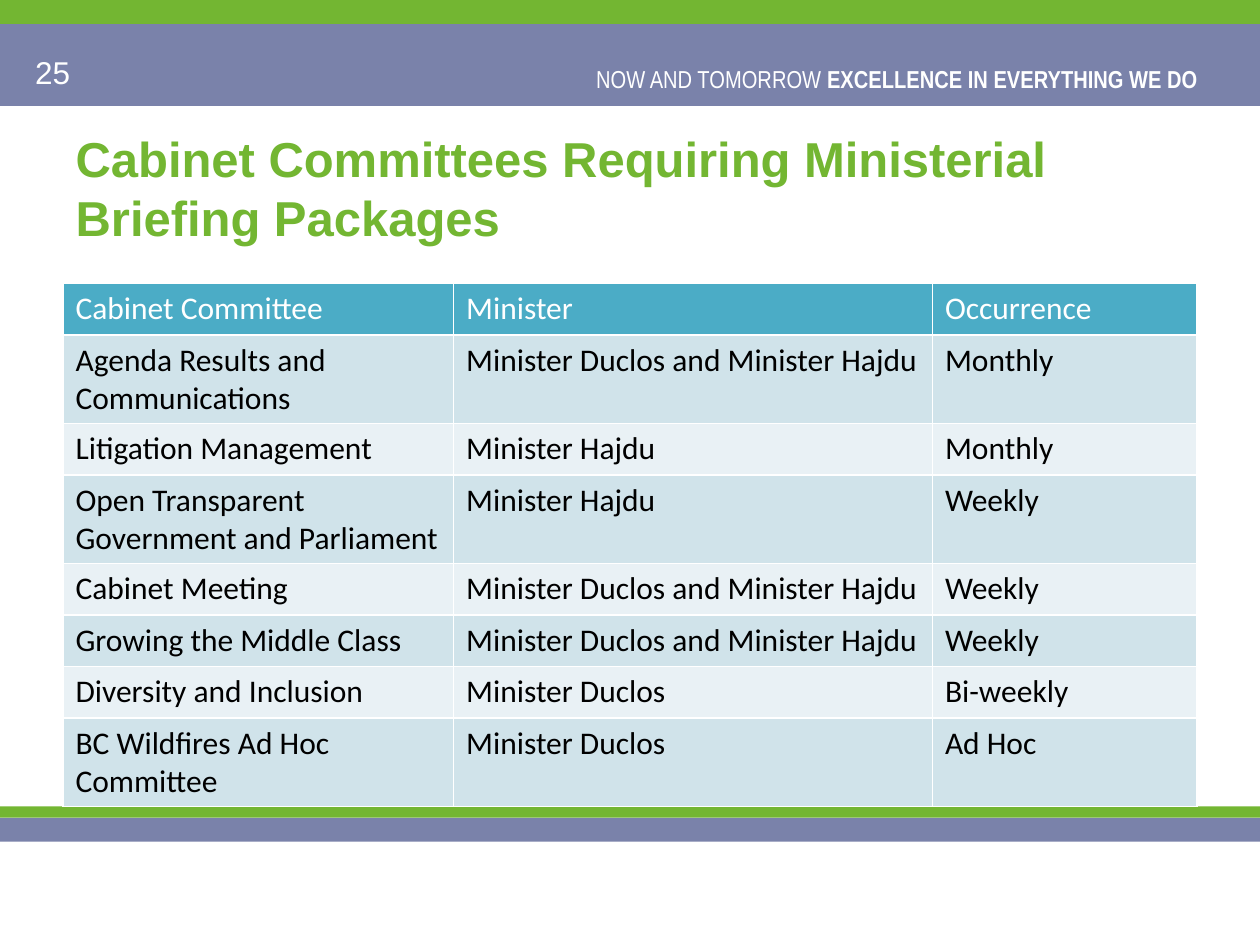
from pptx import Presentation
from pptx.dml.color import RGBColor
from pptx.enum.shapes import MSO_SHAPE
from pptx.enum.text import MSO_ANCHOR, PP_ALIGN
from pptx.util import Inches, Pt

GREEN, SLATE, WHITE, BLACK = "73B632", "7A82AA", "FFFFFF", "000000"
HEADER_FILL, BAND_FILLS = "4BACC6", ("D0E3EA", "E9F1F5")
COLUMN_WIDTHS, ROW_HEIGHT = (3.1, 3.8, 2.1), 0.41
BOTH = "Minister Duclos and Minister Hajdu"
COMMITTEES = [
    ("Cabinet Committee", "Minister", "Occurrence"),
    ("Agenda Results and Communications", BOTH, "Monthly"),
    ("Litigation Management", "Minister Hajdu", "Monthly"),
    ("Open Transparent Government and Parliament", "Minister Hajdu", "Weekly"),
    ("Cabinet Meeting", BOTH, "Weekly"),
    ("Growing the Middle Class", BOTH, "Weekly"),
    ("Diversity and Inclusion", "Minister Duclos", "Bi-weekly"),
    ("BC Wildfires Ad Hoc Committee", "Minister Duclos", "Ad Hoc"),
]


def color(value):
    return RGBColor.from_string(value)


def set_font(para, name, size, value, bold=False):
    font = para.font
    font.name, font.size, font.bold = name, Pt(size), bold
    font.color.rgb = color(value)


def add_band(page, top, height, fill):
    """Add a full-width strip."""
    band = page.shapes.add_shape(MSO_SHAPE.RECTANGLE, 0, Inches(top), Inches(10), Inches(height))
    band.shadow.inherit = False
    band.fill.solid()
    band.fill.fore_color.rgb = color(fill)
    band.line.fill.background()


def add_label(page, box, spans, name, size, align=PP_ALIGN.LEFT):
    """Add one white line made of (text, bold) spans."""
    frame = page.shapes.add_textbox(*map(Inches, box)).text_frame
    frame.word_wrap = True
    para = frame.paragraphs[0]
    para.alignment = align
    set_font(para, name, size, WHITE)
    for text, bold in spans:
        span = para.add_run()
        span.text = text
        if bold:
            span.font.bold = True


def add_header(page):
    add_band(page, 0.19, 0.65, SLATE)
    add_band(page, 0, 0.19, GREEN)
    motto = [("NOW AND TOMORROW ", False), ("EXCELLENCE IN EVERYTHING WE DO ", True)]
    add_label(page, (4.6, 0.46, 5.05, 0.34), motto, "Arial Narrow", 14, PP_ALIGN.RIGHT)
    add_label(page, (0.18, 0.37, 2.33, 0.4), [("25", False)], "Arial", 18)


def add_footer(page):
    add_band(page, 6.49, 0.19, SLATE)
    add_band(page, 6.4, 0.09, GREEN)


def place_title(page, box, text):
    title = page.shapes.title
    title.left, title.top, title.width, title.height = map(Inches, box)
    frame = title.text_frame
    frame.text = text
    frame.vertical_anchor = MSO_ANCHOR.MIDDLE
    para = frame.paragraphs[0]
    para.alignment = PP_ALIGN.LEFT
    set_font(para, "Arial", 28, GREEN, bold=True)


def add_committee_table(page, left, top):
    size = (sum(COLUMN_WIDTHS), ROW_HEIGHT * len(COMMITTEES))
    table = page.shapes.add_table(len(COMMITTEES), len(COLUMN_WIDTHS),
                                  *map(Inches, (left, top, *size))).table
    for column, width in zip(table.columns, COLUMN_WIDTHS):
        column.width = Inches(width)
    for row, (line, texts) in zip(table.rows, enumerate(COMMITTEES)):
        row.height = Inches(ROW_HEIGHT)
        fill = BAND_FILLS[(line - 1) % 2] if line else HEADER_FILL
        for cell, text in zip(row.cells, texts):
            cell.text = text
            cell.fill.solid()
            cell.fill.fore_color.rgb = color(fill)
            set_font(cell.text_frame.paragraphs[0], "Calibri", 18, BLACK if line else WHITE)


def main():
    deck = Presentation()
    deck.slide_width, deck.slide_height = Inches(10), Inches(7.5)
    page = deck.slides.add_slide(deck.slide_layouts[5])
    add_header(page)
    add_footer(page)
    place_title(page, (0.5, 0.91, 9, 1.16),
                "Cabinet Committees Requiring Ministerial Briefing Packages")
    add_committee_table(page, 0.5, 2.25)
    deck.save("out.pptx")


if __name__ == "__main__":
    main()
